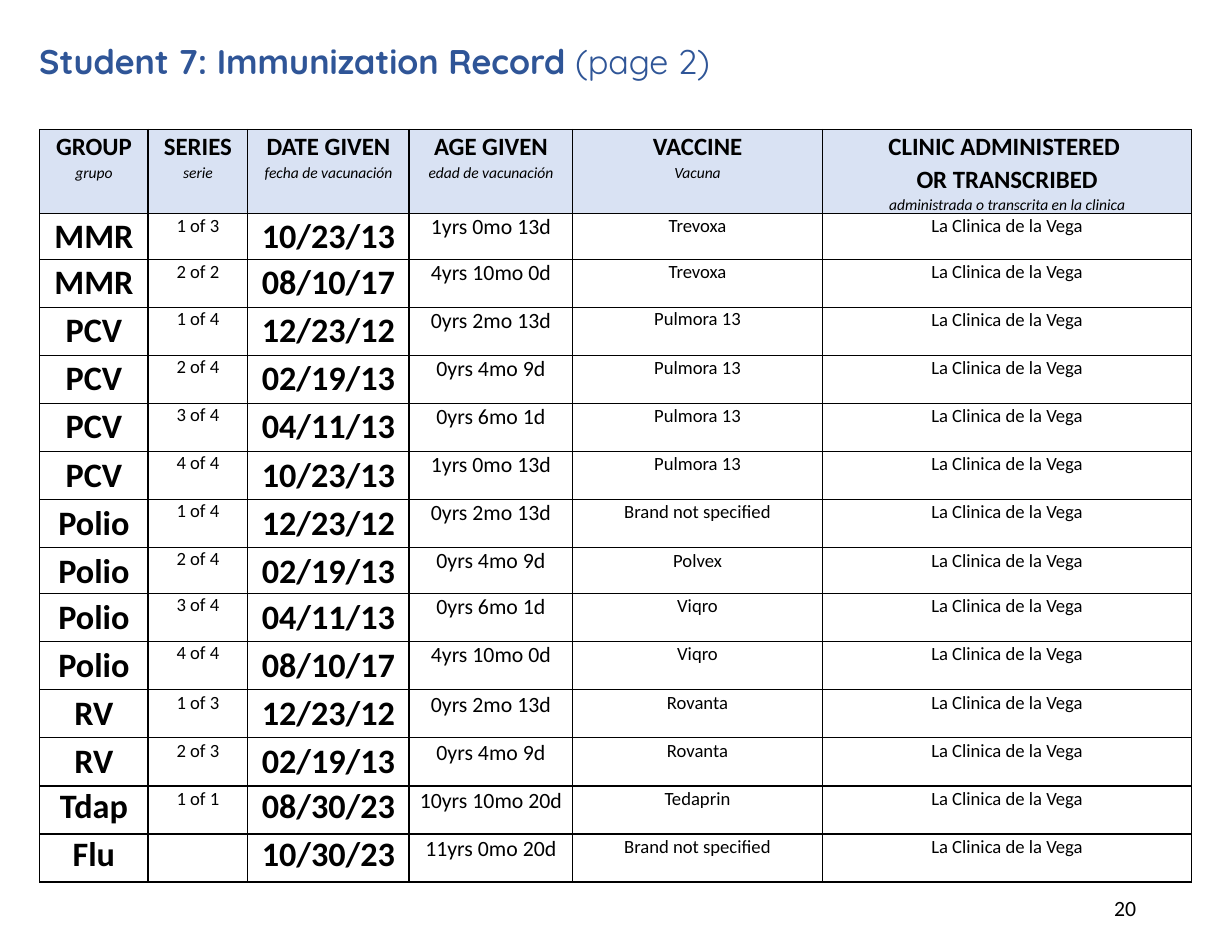
from lxml.etree import SubElement
from pptx import Presentation
from pptx.dml.color import RGBColor
from pptx.enum.text import MSO_ANCHOR, PP_ALIGN
from pptx.oxml.ns import qn
from pptx.util import Cm, Pt

COLORS = {"title": "2F5597", "text": "000000", "header": "D9E2F3", "border": "000000"}
TITLE = ("Student 7: Immunization Record ", "(page 2)")
PAGE_NUMBER = "20"
CLINIC = "La Clinica de la Vega"

# Each heading: English lines, then the Spanish translation
HEADINGS = [
    ("GROUP", "grupo"),
    ("SERIES", "serie"),
    ("DATE GIVEN", "fecha de vacunación"),
    ("AGE GIVEN", "edad de vacunación"),
    ("VACCINE", "Vacuna"),
    ("CLINIC ADMINISTERED ", "OR TRANSCRIBED", "administrada o transcrita en la clinica"),
]
# Most ages hold a no-break space before the days
DOSES = [
    ("MMR", "1 of 3", "10/23/13", "1yrs 0mo 13d", "Trevoxa"),
    ("MMR", "2 of 2", "08/10/17", "4yrs 10mo 0d", "Trevoxa"),
    ("PCV", "1 of 4", "12/23/12", "0yrs 2mo 13d", "Pulmora 13"),
    ("PCV", "2 of 4", "02/19/13", "0yrs 4mo 9d", "Pulmora 13"),
    ("PCV", "3 of 4", "04/11/13", "0yrs 6mo 1d", "Pulmora 13"),
    ("PCV", "4 of 4", "10/23/13", "1yrs 0mo 13d", "Pulmora 13"),
    ("Polio", "1 of 4", "12/23/12", "0yrs 2mo 13d", "Brand not specified"),
    ("Polio", "2 of 4", "02/19/13", "0yrs 4mo 9d", "Polvex"),
    ("Polio", "3 of 4", "04/11/13", "0yrs 6mo 1d", "Viqro"),
    ("Polio", "4 of 4", "08/10/17", "4yrs 10mo 0d", "Viqro"),
    ("RV", "1 of 3", "12/23/12", "0yrs 2mo 13d", "Rovanta"),
    ("RV", "2 of 3", "02/19/13", "0yrs 4mo 9d", "Rovanta"),
    ("Tdap", "1 of 1", "08/30/23", "10yrs 10mo 20d", "Tedaprin"),
    ("Flu", "", "10/30/23", "11yrs 0mo 20d", "Brand not specified"),
]

COLUMN_WIDTHS = [2.46, 2.26, 3.66, 3.71, 5.66, 8.38]
COLUMN_SIZES = [22, 12, 22, 14, 12, 12]
BOLD_COLUMNS = (0, 2)
HEADER_HEIGHT, ROW_HEIGHT, SHORT_ROW_HEIGHT = 1.81, 1.09, 1.04
SHORT_ROWS = (1, 8)
LOOSE = 1.07
SINGLE_SPACED = {  # column: row numbers
    0: (13, 14),
    1: range(3, 11),
    2: (13, 14),
    3: range(1, 11),
    4: (3,),
}


def add_text(paragraph, text, size=12, bold=False, italic=False, font="Calibri",
             color="text", align=PP_ALIGN.CENTER, spacing=None):
    paragraph.alignment = align
    paragraph.line_spacing = spacing
    run = paragraph.add_run()
    run.text = text
    run.font.name = font
    run.font.size = Pt(size)
    run.font.bold = bold
    run.font.italic = italic
    run.font.color.rgb = RGBColor.from_string(COLORS[color])


def add_text_box(slide, left, top, width, height):
    frame = slide.shapes.add_textbox(Cm(left), Cm(top), Cm(width), Cm(height)).text_frame
    frame.word_wrap = True
    frame.vertical_anchor = MSO_ANCHOR.MIDDLE
    return frame.paragraphs[0]


def set_borders(cell):
    properties = cell._tc.get_or_add_tcPr()
    for side in ("a:lnL", "a:lnR", "a:lnT", "a:lnB"):
        line = SubElement(properties, qn(side), w=str(Pt(1)))
        fill = SubElement(line, qn("a:solidFill"))
        SubElement(fill, qn("a:srgbClr"), val=COLORS["border"])


def prepare_cell(cell, fill=None):
    cell.margin_left = cell.margin_right = Cm(0.18)
    cell.margin_top = cell.margin_bottom = 0
    set_borders(cell)
    if fill:
        cell.fill.solid()
        cell.fill.fore_color.rgb = RGBColor.from_string(COLORS[fill])
    else:
        cell.fill.background()


def add_record_table(slide):
    heights = [HEADER_HEIGHT] + [
        SHORT_ROW_HEIGHT if number in SHORT_ROWS else ROW_HEIGHT
        for number in range(1, len(DOSES) + 1)
    ]
    table = slide.shapes.add_table(
        len(heights), len(COLUMN_WIDTHS), Cm(0.9), Cm(2.94),
        Cm(sum(COLUMN_WIDTHS)), Cm(sum(heights))).table
    table.first_row = table.horz_banding = False
    for column, width in zip(table.columns, COLUMN_WIDTHS):
        column.width = Cm(width)
    for row, height in zip(table.rows, heights):
        row.height = Cm(height)

    for column, (*lines, translation) in enumerate(HEADINGS):
        cell = table.cell(0, column)
        prepare_cell(cell, fill="header")
        frame = cell.text_frame
        for index, line in enumerate(lines):
            paragraph = frame.add_paragraph() if index else frame.paragraphs[0]
            add_text(paragraph, line, size=16, bold=True, spacing=LOOSE)
        add_text(frame.add_paragraph(), translation, size=10, italic=True, spacing=LOOSE)

    for number, dose in enumerate(DOSES, start=1):
        for column, value in enumerate((*dose, CLINIC)):
            cell = table.cell(number, column)
            prepare_cell(cell)
            if value:
                single = number in SINGLE_SPACED.get(column, ())
                add_text(cell.text_frame.paragraphs[0], value, size=COLUMN_SIZES[column],
                         bold=column in BOLD_COLUMNS, spacing=None if single else LOOSE)


def main():
    presentation = Presentation()
    presentation.slide_width, presentation.slide_height = Cm(27.94), Cm(21.59)
    slide = presentation.slides.add_slide(presentation.slide_layouts[6])

    title = add_text_box(slide, 0.64, 0.43, 24.1, 2.01)
    for text, bold in zip(TITLE, (True, False)):
        add_text(title, text, size=22, bold=bold, font="Quicksand", color="title",
                 align=PP_ALIGN.LEFT, spacing=0.9)
    add_record_table(slide)
    number = add_text_box(slide, 19.72, 20.02, 6.3, 1.14)
    add_text(number, PAGE_NUMBER, size=14, align=PP_ALIGN.RIGHT)

    presentation.save("out.pptx")


if __name__ == "__main__":
    main()
